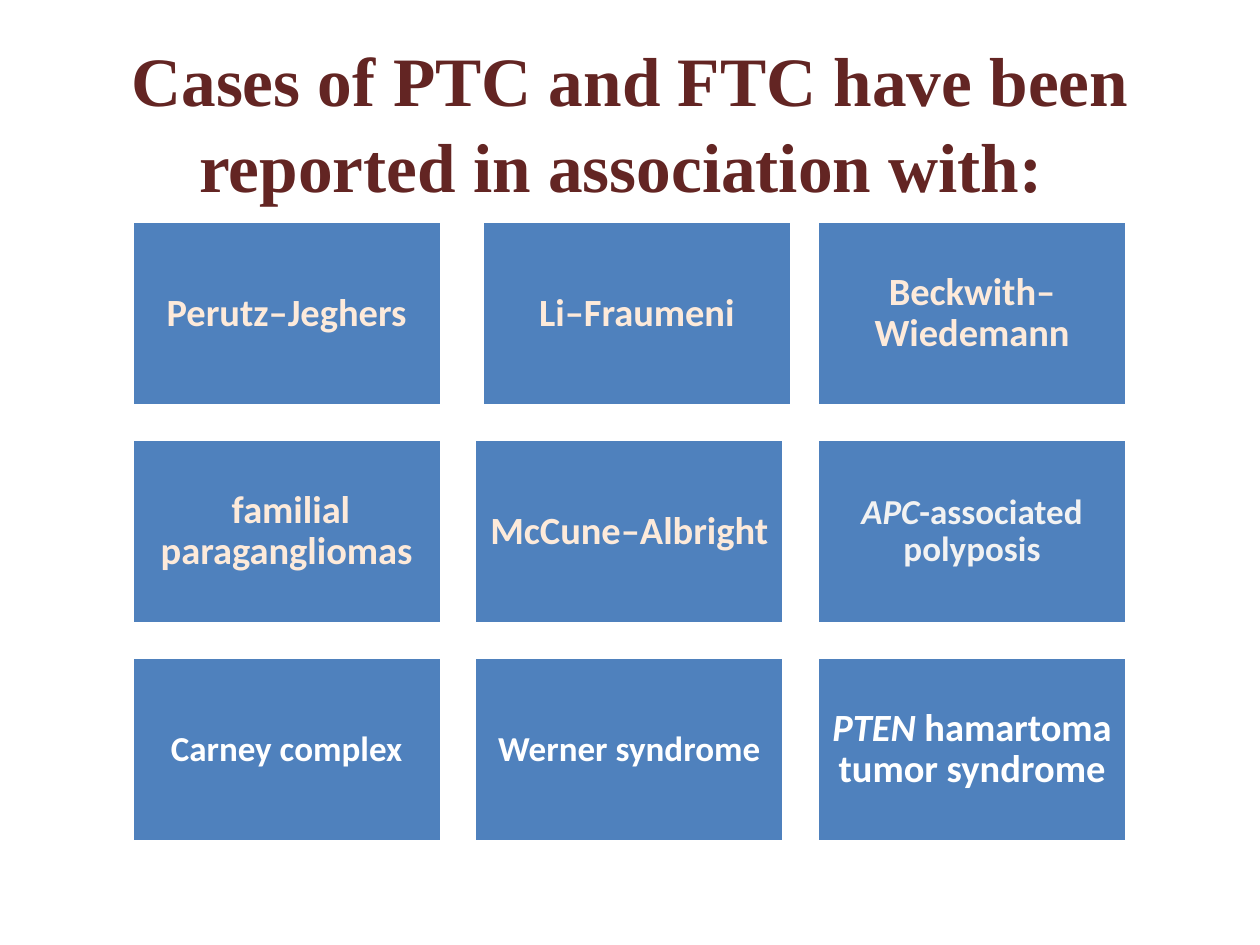
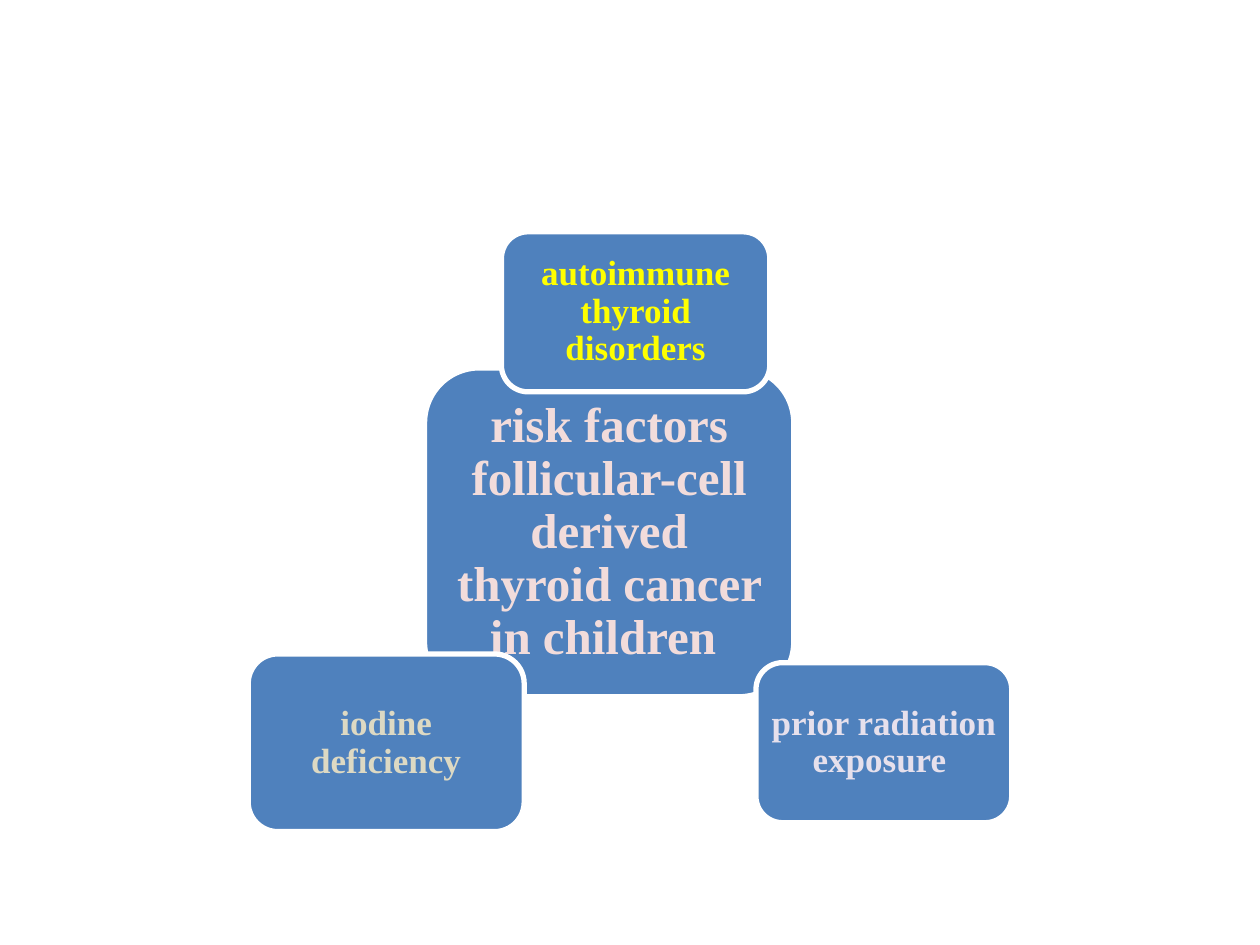
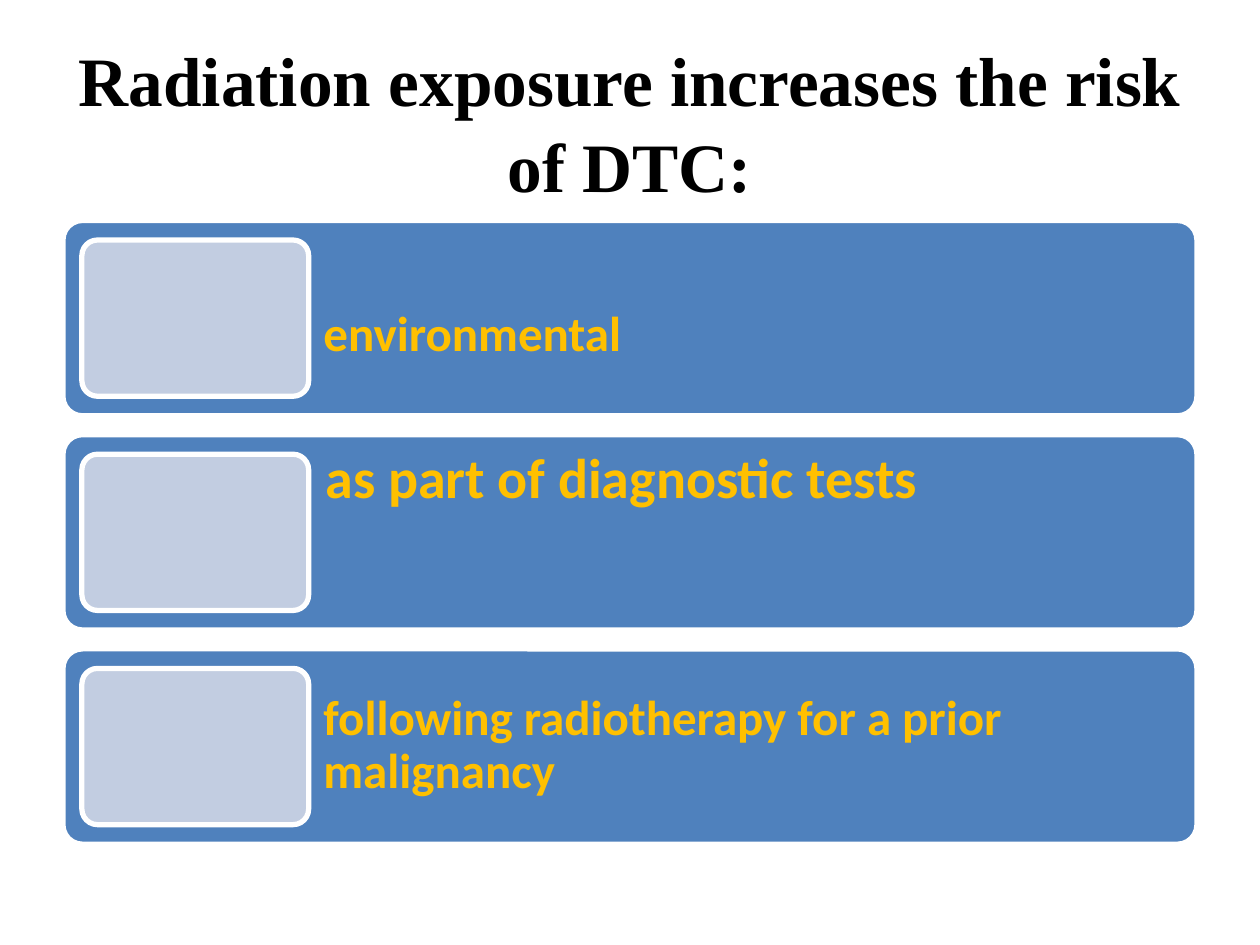
import pptx
import pptx.util
import pptx.dml.color
import pptx.enum.shapes
import pptx.enum.text

Inches = pptx.util.Inches
Pt = pptx.util.Pt
RGBColor = pptx.dml.color.RGBColor
MSO_SHAPE = pptx.enum.shapes.MSO_SHAPE
ANCHOR = pptx.enum.text.MSO_ANCHOR
ALIGN = pptx.enum.text.PP_ALIGN

BLUE = RGBColor(0x4F, 0x81, 0xBD)
PALE_BLUE = RGBColor(0xC2, 0xCD, 0xE1)
WHITE = RGBColor(0xFF, 0xFF, 0xFF)
BLACK = RGBColor(0x00, 0x00, 0x00)
MAROON = RGBColor(0x63, 0x25, 0x23)
PEACH = RGBColor(0xFD, 0xEA, 0xDA)
LIGHT_GREY = RGBColor(0xF2, 0xF2, 0xF2)
ROSE = RGBColor(0xF2, 0xDC, 0xDB)
YELLOW = RGBColor(0xFF, 0xFF, 0x00)
LAVENDER = RGBColor(0xE6, 0xE0, 0xEC)
TAN = RGBColor(0xDD, 0xD9, 0xC3)
GOLD = RGBColor(0xFF, 0xC0, 0x00)

SANS = "Calibri"
SERIF = "Times New Roman"


class Deck:
    """Holds the shared style and the slide being built."""

    def __init__(self):
        self.prs = pptx.Presentation()
        self.prs.slide_width = Inches(10)
        self.prs.slide_height = Inches(7.5)
        self.s = None

    def slide(self):
        self.s = self.prs.slides.add_slide(self.prs.slide_layouts[6])

    def text(self, sp, text, font, size, color, italic="", spacing=0.9,
             align=ALIGN.CENTER, anchor=ANCHOR.MIDDLE):
        tf = sp.text_frame
        tf.word_wrap = True
        tf.vertical_anchor = anchor
        p = tf.paragraphs[0]
        p.alignment = align
        p.line_spacing = spacing
        p.font.name = font
        p.font.size = Pt(size)
        p.font.bold = True
        p.font.color.rgb = color
        if italic:
            r = p.add_run()
            r.text = italic
            r.font.italic = True
        p.add_run().text = text

    def margins(self, sp, left, top, right, bottom):
        tf = sp.text_frame
        tf.margin_left, tf.margin_top = Inches(left), Inches(top)
        tf.margin_right, tf.margin_bottom = Inches(right), Inches(bottom)

    def title(self, text, color):
        sp = self.s.shapes.add_textbox(Inches(0.5), Inches(0.33), Inches(9), Inches(1.25))
        self.text(sp, text, SERIF, 39.6, color, spacing=1.04)

    def box(self, x, y, w, h, kind=MSO_SHAPE.ROUNDED_RECTANGLE, fill=BLUE, adj=None, inset=0.08):
        sp = self.s.shapes.add_shape(kind, Inches(x), Inches(y), Inches(w), Inches(h))
        sp.shadow.inherit = False
        sp.fill.solid()
        sp.fill.fore_color.rgb = fill
        sp.line.color.rgb = WHITE
        sp.line.width = Pt(3)
        if adj is not None:
            sp.adjustments[0] = adj
        self.margins(sp, inset, inset, inset, inset)
        return sp


def syndromes(d):
    d.slide()
    d.title("Cases of PTC and FTC have been reported in association with: ", MAROON)
    cells = [
        ("", "Perutz–Jeghers", 22, PEACH),
        ("", "Li–Fraumeni", 22, PEACH),
        ("", "Beckwith–Wiedemann", 22, PEACH),
        ("", " familial paragangliomas", 22, PEACH),
        ("", "McCune–Albright", 22, PEACH),
        ("APC", "-associated polyposis", 20, LIGHT_GREY),
        ("", "Carney complex", 20, WHITE),
        ("", "Werner syndrome", 20, WHITE),
        ("PTEN ", "hamartoma tumor syndrome", 22, WHITE),
    ]
    nudges = {1: 0.06}
    for i, (italic, text, size, color) in enumerate(cells):
        row, col = divmod(i, 3)
        x = 1.04 + 2.72 * col + nudges.get(i, 0)
        sp = d.box(x, 1.75 + 1.73 * row, 2.47, 1.48, MSO_SHAPE.RECTANGLE, inset=size / 250)
        d.text(sp, text, SANS, size, color, italic)


def risk_factors(d):
    d.slide()
    factors = [
        (3.37, 2.92, 2.93, 2.61, 28, ROSE, 0.08,
         "risk factors follicular-cell derived thyroid cancer in children "),
        (3.98, 1.84, 2.13, 1.27, 20, YELLOW, 0.06, "autoimmune thyroid disorders"),
        (6, 5.26, 2.03, 1.27, 20, LAVENDER, 0.06, "prior radiation exposure "),
        (1.97, 5.19, 2.19, 1.41, 20, TAN, 0.06, "iodine deficiency"),
    ]
    for x, y, w, h, size, color, inset, text in factors:
        d.text(d.box(x, y, w, h, inset=inset), text, SERIF, size, color)


def radiation(d):
    d.slide()
    d.title("Radiation exposure increases the risk of DTC:", BLACK)
    sources = [
        ("environmental", 28, ANCHOR.TOP, 0.66),
        ("as part of diagnostic tests", 32, ANCHOR.TOP, 0.08),
        ("following radiotherapy for a prior malignancy", 28, ANCHOR.MIDDLE, 0.08),
    ]
    for i, (text, size, anchor, top) in enumerate(sources):
        y = 1.75 + 1.7 * i
        band = d.box(0.5, y, 9, 1.55, adj=0.1)
        d.margins(band, 1.91 + size / 250, top, 0.08, 0.08)
        d.text(band, text, SANS, size, GOLD, align=ALIGN.LEFT, anchor=anchor)
        d.box(0.65, y + 0.155, 1.8, 1.24, fill=PALE_BLUE, adj=0.1)


def main():
    d = Deck()
    syndromes(d)
    risk_factors(d)
    radiation(d)
    d.prs.save("out.pptx")


if __name__ == "__main__":
    main()
